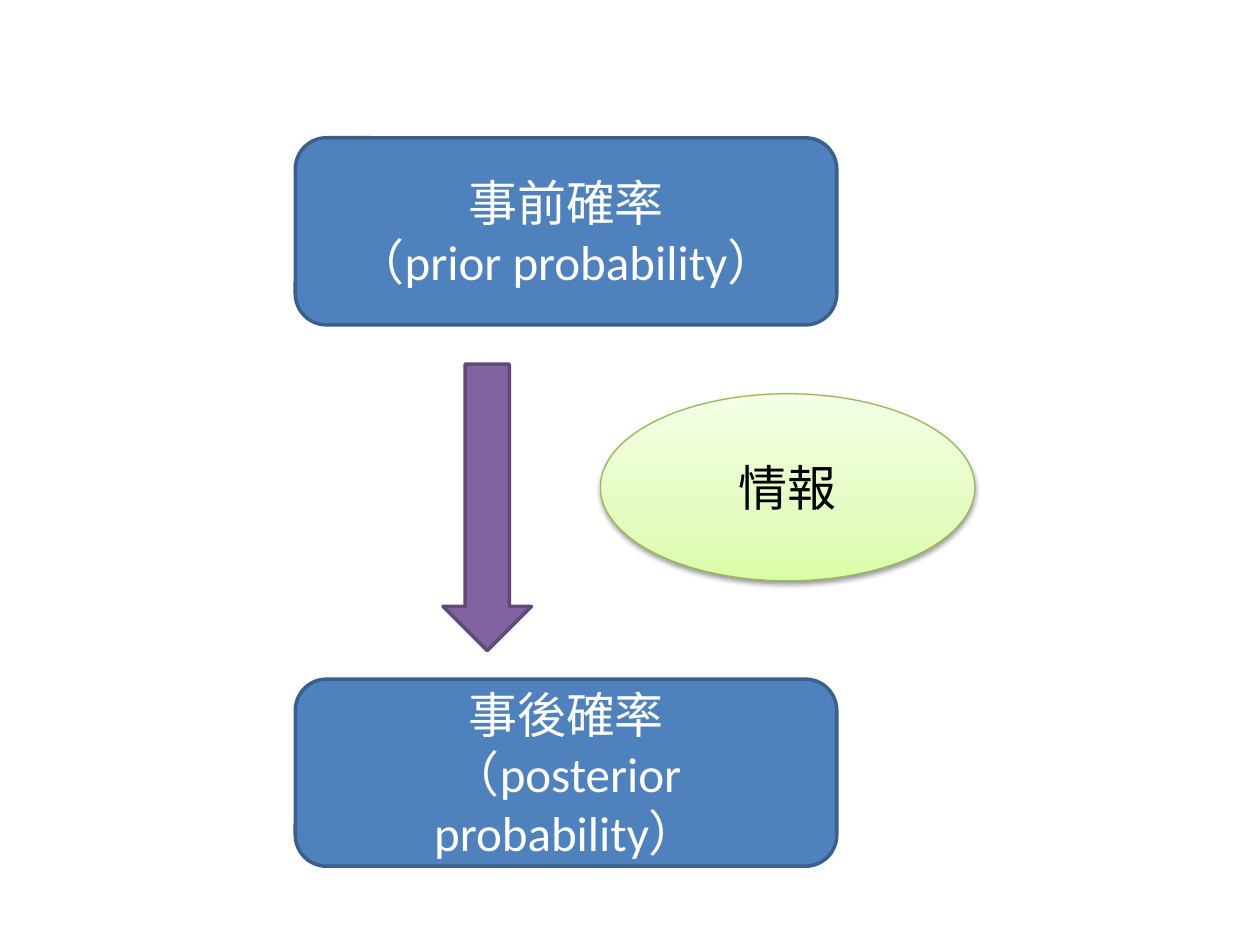
from copy import deepcopy

from lxml import etree
from pptx import Presentation
from pptx import util as u
from pptx.dml.color import RGBColor
from pptx.enum import shapes, text
from pptx.oxml import ns

color = RGBColor.from_string


def add_labelled_shape(kind, box, fill, line, line_width, lines=(), font_color="FFFFFF"):
    """Add a preset shape with one centred paragraph per line; fill None is left to the caller."""
    shape = slide.shapes.add_shape(kind, *(u.Pt(length) for length in box))
    shape.shadow.inherit = False
    if fill:
        shape.fill.solid()
        shape.fill.fore_color.rgb = color(fill)
    shape.line.color.rgb = color(line)
    shape.line.width = u.Pt(line_width)
    frame = shape.text_frame
    frame.word_wrap = True
    frame.vertical_anchor = text.MSO_ANCHOR.MIDDLE
    for index, line_text in enumerate(lines):
        paragraph = frame.add_paragraph() if index else frame.paragraphs[0]
        paragraph.text = line_text
        paragraph.alignment = text.PP_ALIGN.CENTER
        paragraph.font.name = "Calibri"
        paragraph.font.size = u.Pt(28)
        paragraph.font.color.rgb = color(font_color)
    return shape


presentation = Presentation()
presentation.slide_width = u.Pt(720)
presentation.slide_height = u.Pt(540)
slide = presentation.slides.add_slide(presentation.slide_layouts[6])
kinds = shapes.MSO_SHAPE

# Prior and posterior probability
prior = (78.75, ["事前確率", "（prior probability）"])
posterior = (388.1, ["事後確率", "（posterior probability）"])

add_labelled_shape(kinds.ROUNDED_RECTANGLE, (168.75, prior[0], 309.4, 106.9),
                   "4F81BD", "3A5F8C", 2, prior[1])

# Information: pale green gradient, darkest at the bottom, with a soft shadow
information = add_labelled_shape(kinds.OVAL, (343.1, 225, 214, 106.9),
                                 None, "98B955", 0.75, ["情報"], "000000")
information.fill.gradient()
information.fill.gradient_angle = 90
stop_list = information._element.spPr.find(".//" + ns.qn("a:gsLst"))
stop_list.insert(1, deepcopy(stop_list[0]))
stops = [(0, "DAFDA7"), (0.35, "E4FCC2"), (1, "F5FFE7")]
for stop, (position, stop_color) in zip(information.fill.gradient_stops, stops):
    stop.position = position
    stop.color.rgb = color(stop_color)

effects = information._element.spPr.find(ns.qn("a:effectLst"))
shadow = etree.SubElement(effects, ns.qn("a:outerShdw"), blurRad=str(u.Pt(3.1)),
                          dist=str(u.Pt(1.6)), dir="5400000", rotWithShape="0")
shadow_color = etree.SubElement(shadow, ns.qn("a:srgbClr"), val="000000")
etree.SubElement(shadow_color, ns.qn("a:alpha"), val="38000")

add_labelled_shape(kinds.ROUNDED_RECTANGLE, (168.75, posterior[0], 309.4, 106.9),
                   "4F81BD", "3A5F8C", 2, posterior[1])

# Update from prior to posterior
add_labelled_shape(kinds.DOWN_ARROW, (253.1, 208.1, 50.6, 163.7), "8064A2", "5F4A78", 2)

presentation.save("out.pptx")
